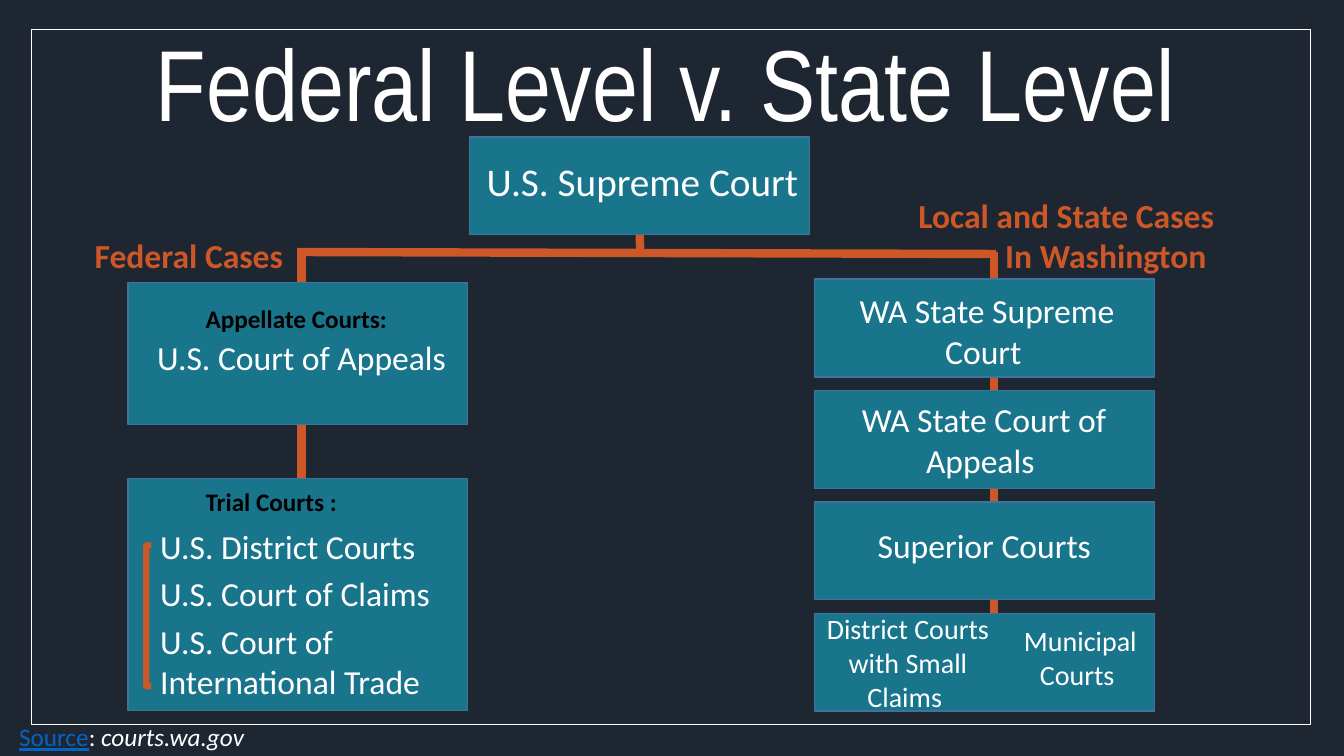
from lxml import etree
from pptx import Presentation
from pptx.dml.color import RGBColor
from pptx.enum.shapes import MSO_CONNECTOR, MSO_SHAPE
from pptx.enum.text import PP_ALIGN
from pptx.oxml.ns import qn
from pptx.util import Inches, Pt

LEFT, CENTER, RIGHT = PP_ALIGN.LEFT, PP_ALIGN.CENTER, PP_ALIGN.RIGHT
RECTANGLE, BRACKET = MSO_SHAPE.RECTANGLE, MSO_SHAPE.LEFT_BRACKET
STRAIGHT = MSO_CONNECTOR.STRAIGHT
BOTTOM = 2

COLORS = {
    "background": "1E2631",
    "white": "FFFFFF",
    "black": "000000",
    "teal": "19758C",
    "box edge": "42719B",
    "orange": "CD5727",
    "link": "0563C1",
}
BOX_WIDTH = 3.37
STATE_BOX_HEIGHT = 0.97


def color(name):
    return RGBColor.from_string(COLORS[name])


def add_outlined(kind, position, line_color, line_width, fill=None):
    """Add a preset shape without shadow, hollow unless a fill is named."""
    shape = slide.shapes.add_shape(kind, *map(Inches, position))
    shape.shadow.inherit = False
    if fill:
        shape.fill.solid()
        shape.fill.fore_color.rgb = color(fill)
    else:
        shape.fill.background()
    shape.line.color.rgb = color(line_color)
    shape.line.width = Pt(line_width)
    return shape


presentation = Presentation()
presentation.slide_width = Inches(13.33)
presentation.slide_height = Inches(7.5)
slide = presentation.slides.add_slide(presentation.slide_layouts[6])
slide.background.fill.solid()
slide.background.fill.fore_color.rgb = color("background")

# Tree lines: two trunks behind the boxes, then crossbar and stem
tree_lines = []
for x1, y1, x2, y2 in [
    (2.99, 2.46, 2.99, 6.8),
    (9.86, 2.5, 9.86, 6.85),
    (2.96, 2.5, 9.88, 2.52),
    (6.35, 2.33, 6.35, 2.5),
]:
    line = slide.shapes.add_connector(
        STRAIGHT, Inches(x1), Inches(y1), Inches(x2), Inches(y2))
    line.line.color.rgb = color("orange")
    line.line.width = Pt(6)
    etree.SubElement(line._element.spPr, qn("a:effectLst"))
    tree_lines.append(line)

add_outlined(RECTANGLE, (0.31, 0.29, 12.69, 6.9), "white", 1)

# Court boxes
court_boxes = [(4.66, 1.36, 0.97), (1.27, 2.8, 1.41), (1.27, 4.75, 2.3)]
court_boxes += [(8.08, 2.77 + 1.105 * row, STATE_BOX_HEIGHT) for row in range(4)]
boxes = [
    add_outlined(RECTANGLE, (left, top, BOX_WIDTH, height), "box edge", 1, "teal")
    for left, top, height in court_boxes
]
tree_lines[-1].begin_connect(boxes[0], BOTTOM)

trial_bracket = add_outlined(BRACKET, (1.45, 5.41, 0.05, 1.4), "orange", 4.5)
trial_bracket.adjustments[0] = 0.083

# Text: position, runs, size, colour, bold, alignment, font
labels = [
    ((0.31, 0.16, 12.58, 1.31), "Federal Level v. State Level", 72, "white", False, CENTER, "Arial Narrow"),
    ((0.84, 2.28, 2.64, 0.5), "Federal Cases", 24, "orange", True, LEFT, "Calibri"),
    ((8.84, 1.88, 3.3, 0.91), "Local and State Cases In Washington ", 24, "orange", True, RIGHT, "Calibri"),
    ((1.94, 2.96, 2.53, 0.4), "Appellate Courts:", 18, "black", True, LEFT, "Calibri"),
    ((1.94, 4.78, 2.53, 0.4), "Trial Courts :", 18, "black", True, LEFT, "Calibri"),
]
federal_courts = [
    (1.46, 3.29, 0.5, "U.S. Court of Appeals"),
    (1.49, 5.17, 0.5, "U.S. District Courts"),
    (1.49, 5.63, 0.5, "U.S. Court of Claims"),
    (1.49, 6.11, 0.91, "U.S. Court of International Trade"),
]
for left, top, height, name in federal_courts:
    labels.append(((left, top, 3.52, height), name, 24, "white", False, LEFT, "Calibri"))
centered_courts = [
    (4.61, 1.51, 3.52, 0.61, "U.S. Supreme Court", 28),
    (8.03, 2.83, 3.52, 0.91, "WA State Supreme Court ", 24),
    (8.0, 3.91, 3.52, 0.91, "WA State Court of Appeals ", 24),
    (8.04, 5.16, 3.52, 0.5, "Superior Courts ", 24),
    (7.96, 6.02, 2.09, 1.11, "District Courts with Small Claims ", 20),
    (9.67, 6.14, 2.09, 0.77, "Municipal Courts ", 20),
]
for left, top, width, height, name, size in centered_courts:
    labels.append(((left, top, width, height), name, size, "white", False, CENTER, "Calibri"))

for position, text, size, text_color, bold, alignment, font_name in labels:
    text_frame = slide.shapes.add_textbox(*map(Inches, position)).text_frame
    text_frame.word_wrap = True
    text_frame.text = text
    paragraph = text_frame.paragraphs[0]
    paragraph.alignment = alignment
    font = paragraph.runs[0].font
    font.name, font.size, font.bold = font_name, Pt(size), bold
    font.color.rgb = color(text_color)

# Source line
source_frame = slide.shapes.add_textbox(
    Inches(0.09), Inches(7.11), Inches(2.75), Inches(0.4)).text_frame
source_frame.word_wrap = True
for text, text_color, underline, italic in [
    ("Source", "link", True, False),
    (": ", "white", False, False),
    ("courts.wa.gov", "white", False, True),
]:
    run = source_frame.paragraphs[0].add_run()
    run.text = text
    run.font.name, run.font.size = "Calibri", Pt(18)
    run.font.underline, run.font.italic = underline, italic
    run.font.color.rgb = color(text_color)

presentation.save("out.pptx")
